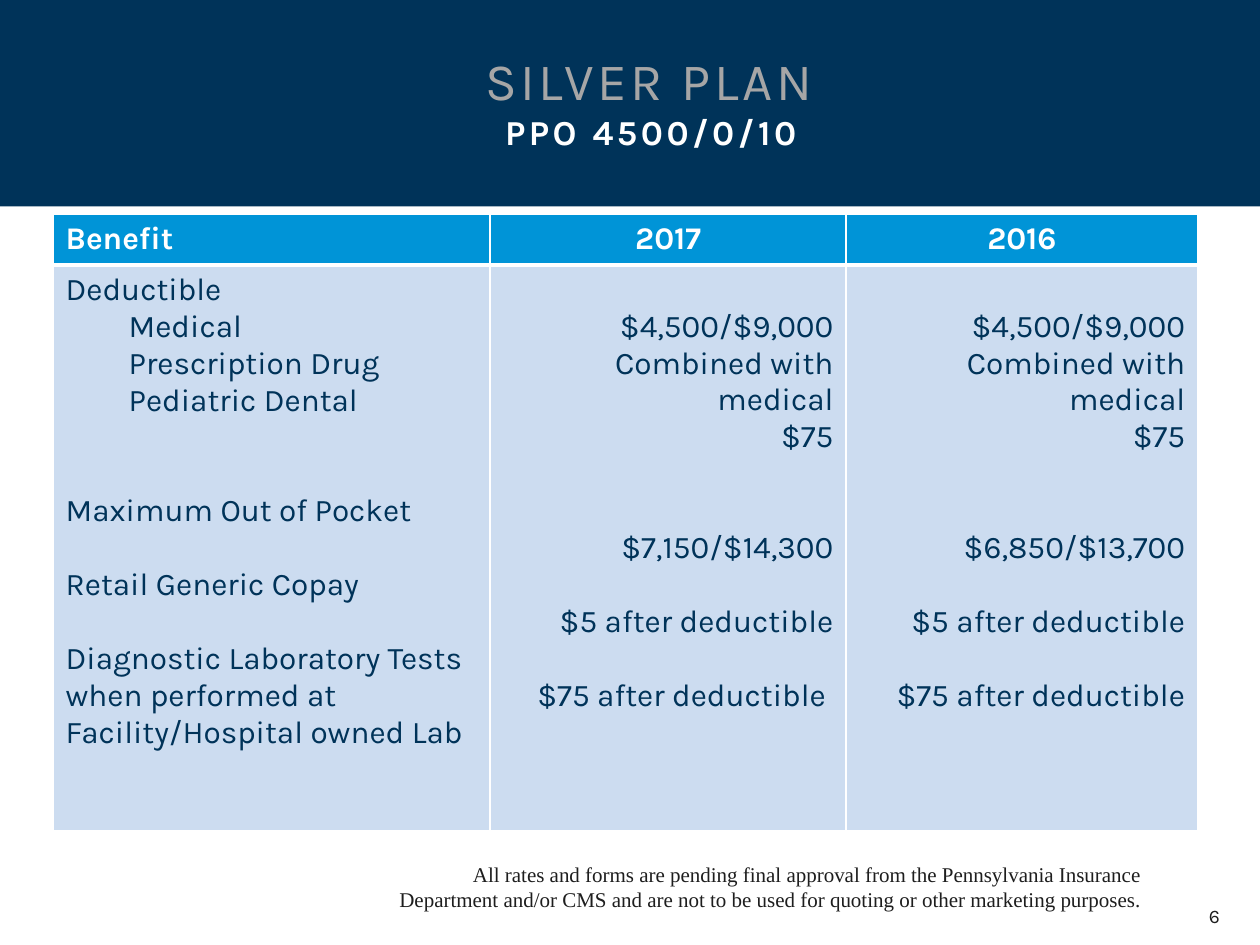
"""Build the Silver plan benefit comparison slide."""
from dataclasses import dataclass

from lxml import etree
from pptx import Presentation
from pptx import util as u
from pptx.dml.color import RGBColor
from pptx.enum import shapes, text
from pptx.oxml import ns

Pt = u.Pt
ALIGN = text.PP_ALIGN


@dataclass(frozen=True)
class Theme:
    """Colours, fonts and type sizes."""
    navy: str = "003359"
    blue: str = "0094D7"
    pale: str = "CCDCF0"
    silver: str = "A6A6A6"
    white: str = "FFFFFF"
    ink: str = "1E1E1E"
    sans: str = "Karla"
    serif: str = "Times New Roman"
    title: int = 30
    subtitle: int = 20
    body: int = 18
    note: int = 12
    number: int = 11
    line_pitch: float = 21.06


@dataclass(frozen=True)
class Entry:
    """A table paragraph with blank lines above it and an indent level."""
    words: str
    lines_above: int = 0
    level: int = 0


@dataclass(frozen=True)
class Column:
    """A table column with its heading and entries."""
    heading: str
    width: float
    entries: tuple[Entry, ...]
    heading_align: ALIGN = ALIGN.CENTER
    align: ALIGN = ALIGN.RIGHT
    top_lines: int = 1


@dataclass(frozen=True)
class Label:
    """A loose text box."""
    words: str
    box: tuple[float, float, float, float]
    font: str
    size: int
    align: ALIGN


THEME = Theme()


def amounts(out_of_pocket: str, laboratory: str) -> tuple[Entry, ...]:
    """Return the entries of one plan year."""
    return (Entry("$4,500/$9,000"), Entry("Combined with medical"), Entry("$75"),
            Entry(out_of_pocket, 2), Entry("$5 after deductible", 1), Entry(laboratory, 1))


COLUMNS = (
    Column("Benefit", 249.8, (
        Entry("Deductible"), Entry("Medical", level=1),
        Entry("Prescription Drug", level=1), Entry("Pediatric Dental", level=1),
        Entry("Maximum Out of Pocket", 2), Entry("Retail Generic Copay", 1),
        Entry("Diagnostic Laboratory Tests when performed at Facility/Hospital owned Lab", 1),
    ), ALIGN.LEFT, ALIGN.LEFT, 0),
    Column("2017", 203.4, amounts("$7,150/$14,300", "$75 after deductible ")),
    Column("2016", 201, amounts("$6,850/$13,700", "$75 after deductible")),
)
LABELS = (
    Label("6", (671, 512.6, 46, 21.6), THEME.sans, THEME.number, ALIGN.CENTER),
    Label("All rates and forms are pending final approval from the Pennsylvania Insurance "
          "Department and/or CMS and are not to be used for quoting or other marketing purposes.",
          (212.4, 488.9, 447.1, 36), THEME.serif, THEME.note, ALIGN.RIGHT),
)


def style_font(font, name: str, size: float, color: str, bold: bool = False) -> None:
    """Set typeface, size, colour and weight."""
    font.name, font.size, font.bold = name, Pt(size), bold
    font.color.rgb = RGBColor.from_string(color)


def add_banner(slide, title) -> None:
    """Place the navy band behind the title."""
    banner = slide.shapes.add_shape(shapes.MSO_SHAPE.RECTANGLE, 0, 0, Pt(720), Pt(118))
    banner.shadow.inherit = False
    banner.fill.solid()
    banner.fill.fore_color.rgb = RGBColor.from_string(THEME.navy)
    banner.line.fill.background()
    title.element.addprevious(banner.element)


def fill_title(title) -> None:
    """Write the plan name and its code into the title placeholder."""
    title.left, title.top, title.width, title.height = map(Pt, (47.5, 23.8, 648.7, 82.8))
    frame = title.text_frame
    frame.word_wrap, frame.vertical_anchor = True, text.MSO_ANCHOR.TOP
    frame.auto_size = text.MSO_AUTO_SIZE.NONE
    paragraph = frame.paragraphs[0]
    paragraph.alignment = ALIGN.CENTER
    name = paragraph.add_run()
    paragraph.add_line_break()
    code = paragraph.add_run()
    name.text, code.text = "SILVER PLAN", "PPO 4500/0/10"
    style_font(name.font, THEME.sans, THEME.title, THEME.silver)
    style_font(code.font, THEME.sans, THEME.subtitle, THEME.white, True)
    for run in (name, code):
        run.font._element.set("spc", "200")


def add_label(slide, label: Label) -> None:
    """Add a text box centred vertically."""
    frame = slide.shapes.add_textbox(*map(Pt, label.box)).text_frame
    frame.word_wrap, frame.vertical_anchor = True, text.MSO_ANCHOR.MIDDLE
    paragraph = frame.paragraphs[0]
    paragraph.text, paragraph.alignment = label.words, label.align
    style_font(paragraph.font, label.font, label.size, THEME.ink)


def style_cell(cell, fill: str, bottom: float = 1) -> None:
    """Give a cell white borders and a solid fill."""
    properties = cell._tc.get_or_add_tcPr()
    for side, width in (("L", 1), ("R", 1), ("T", 1), ("B", bottom)):
        line = etree.SubElement(properties, ns.qn(f"a:ln{side}"), w=str(Pt(width)))
        solid = etree.SubElement(line, ns.qn("a:solidFill"))
        etree.SubElement(solid, ns.qn("a:srgbClr"), val=THEME.white)
    cell.fill.solid()
    cell.fill.fore_color.rgb = RGBColor.from_string(fill)


def fill_entries(cell, column: Column) -> None:
    """Write a column's entries with gaps in whole lines."""
    cell.margin_top = Pt(3.6 + column.top_lines * THEME.line_pitch)
    frame = cell.text_frame
    for index, entry in enumerate(column.entries):
        paragraph = frame.add_paragraph() if index else frame.paragraphs[0]
        paragraph.text, paragraph.alignment = entry.words, column.align
        paragraph.level = entry.level
        paragraph._p.get_or_add_pPr().set("marL", str(Pt(36 * entry.level)))
        if entry.lines_above:
            paragraph.space_before = Pt(entry.lines_above * THEME.line_pitch)
        style_font(paragraph.font, THEME.sans, THEME.body, THEME.navy)


def add_benefits(slide) -> None:
    """Add the table of benefits by year."""
    width = sum(column.width for column in COLUMNS)
    table = slide.shapes.add_table(2, len(COLUMNS), Pt(30.3), Pt(122.6), Pt(width), Pt(351.3)).table
    table.horz_banding = False
    table.rows[0].height, table.rows[1].height = Pt(28), Pt(323.3)
    for index, column in enumerate(COLUMNS):
        table.columns[index].width = Pt(column.width)
        header, body = table.cell(0, index), table.cell(1, index)
        style_cell(header, THEME.blue, 3)
        style_cell(body, THEME.pale)
        paragraph = header.text_frame.paragraphs[0]
        paragraph.text, paragraph.alignment = column.heading, column.heading_align
        style_font(paragraph.font, THEME.sans, THEME.body, THEME.white, True)
        fill_entries(body, column)


def main() -> None:
    """Build and save the slide."""
    presentation = Presentation()
    presentation.slide_width, presentation.slide_height = Pt(720), Pt(540)
    slide = presentation.slides.add_slide(presentation.slide_layouts[5])
    title = slide.shapes.title
    add_banner(slide, title)
    fill_title(title)
    for label in LABELS:
        add_label(slide, label)
    add_benefits(slide)
    presentation.save("out.pptx")


if __name__ == "__main__":
    main()
